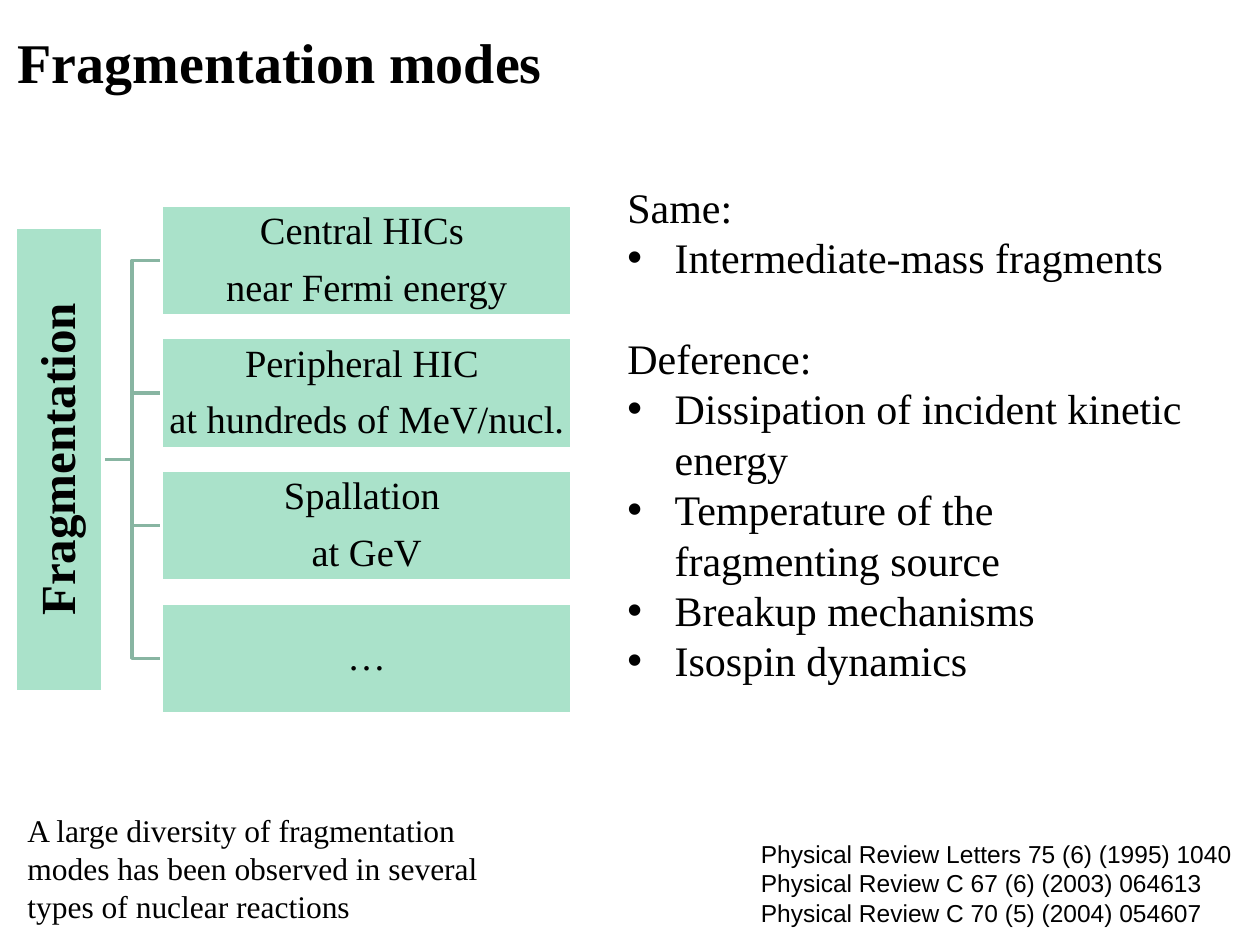
from lxml import etree
from pptx import Presentation
from pptx.dml.color import RGBColor
from pptx.enum import shapes, text
from pptx.oxml.ns import qn
from pptx.util import Pt

# Content
TITLE = "Fragmentation modes"
ROOT = "Fragmentation"
MODES = [
    ["Central HICs ", "near Fermi energy"],
    ["Peripheral HIC ", "at hundreds of MeV/nucl."],
    ["Spallation ", "at GeV"],
    ["…"],
]
COMPARISON = [
    ("Same:", ["Intermediate-mass fragments"]),
    ("Deference:", [
        "Dissipation of incident kinetic energy",
        "Temperature of the fragmenting source",
        "Breakup mechanisms",
        "Isospin dynamics",
    ]),
]
SUMMARY = ("A large diversity of fragmentation modes has been observed "
           "in several types of nuclear reactions")
REFERENCES = [
    "Physical Review Letters 75 (6) (1995) 1040",
    "Physical Review C 67 (6) (2003) 064613",
    "Physical Review C 70 (5) (2004) 054607",
]
COLORS = {"text": "000000", "block": "AAE2CA", "edge": "FFFFFF", "branch": "88B5A2"}
SERIF, SANS = "Times New Roman", "Arial"

# Tree geometry, in points
MODE_LEFT, MODE_TOP, MODE_WIDTH, MODE_HEIGHT = 92.2, 117.2, 234.7, 63.2
MODE_PITCH = 75.8
ROOT_LENGTH, ROOT_THICKNESS, ROOT_RIGHT = 265, 50.4, 59


def color(name):
    return RGBColor.from_string(COLORS[name])


def write(frame, lines, size, font=SERIF, bold=False):
    frame.text = "\n".join(lines)
    for para in frame.paragraphs:
        for span in para.runs:
            span.font.size = Pt(size)
            span.font.name = font
            span.font.bold = bold
            span.font.color.rgb = color("text")


def add_text(page, area, lines, size, font=SERIF, wrap=True):
    box = page.shapes.add_textbox(*map(Pt, area))
    box.text_frame.word_wrap = wrap
    write(box.text_frame, lines, size, font)
    return box.text_frame


def add_block(page, area, lines, size, bold=False):
    block = page.shapes.add_shape(shapes.MSO_SHAPE.RECTANGLE, *map(Pt, area))
    block.shadow.inherit = False
    block.fill.solid()
    block.fill.fore_color.rgb = color("block")
    block.line.color.rgb = color("edge")
    block.line.width = Pt(2)
    frame = block.text_frame
    frame.word_wrap = True
    frame.vertical_anchor = text.MSO_ANCHOR.MIDDLE
    frame.margin_left = frame.margin_right = Pt(1.4)
    frame.margin_top = frame.margin_bottom = Pt(1.4)
    write(frame, lines, size, bold=bold)
    for para in frame.paragraphs:
        para.alignment = text.PP_ALIGN.CENTER
        para.line_spacing = 0.9
        para.space_after = Pt(round(size * 0.4, 1))
    return block


def add_branch(page, start_y, end_y):
    middle = (ROOT_RIGHT + MODE_LEFT) / 2
    builder = page.shapes.build_freeform(Pt(ROOT_RIGHT), Pt(start_y))
    corners = [(middle, start_y), (middle, end_y), (MODE_LEFT, end_y)]
    builder.add_line_segments([(Pt(x), Pt(y)) for x, y in corners], close=False)
    branch = builder.convert_to_shape()
    branch.shadow.inherit = False
    branch.fill.background()
    branch.line.color.rgb = color("branch")
    branch.line.width = Pt(2)


def add_bullet(para):
    properties = para._p.get_or_add_pPr()
    properties.set("marL", str(Pt(27)))
    properties.set("indent", str(-Pt(27)))
    etree.SubElement(properties, qn("a:buFont")).set("typeface", SANS)
    etree.SubElement(properties, qn("a:buChar")).set("char", "•")


def main():
    deck = Presentation()
    deck.slide_width, deck.slide_height = Pt(720), Pt(540)
    page = deck.slides.add_slide(deck.slide_layouts[5])

    # Title
    title = page.shapes.title
    title.left, title.top, title.width, title.height = map(Pt, (2.9, 3.6, 663, 62.6))
    write(title.text_frame, [TITLE], 32, bold=True)
    title.text_frame.vertical_anchor = text.MSO_ANCHOR.MIDDLE
    title.text_frame.paragraphs[0].alignment = text.PP_ALIGN.LEFT

    # References and summary
    add_text(page, (427.7, 475.9, 285, 58.3), REFERENCES, 14, SANS, wrap=False)
    add_text(page, (8.6, 460, 272.2, 72.7), [SUMMARY], 18)

    # Tree: branches, then the root and the modes over them
    tops = [MODE_TOP + MODE_PITCH * index for index in range(len(MODES))]
    centers = [top + MODE_HEIGHT / 2 for top in tops]
    root_y = (centers[0] + centers[-1]) / 2
    for center in reversed(centers):
        add_branch(page, root_y, center)
    root_x = ROOT_RIGHT - ROOT_THICKNESS / 2
    root = add_block(page, (root_x - ROOT_LENGTH / 2, root_y - ROOT_THICKNESS / 2,
                            ROOT_LENGTH, ROOT_THICKNESS), [ROOT], 28, bold=True)
    root.rotation = 270
    for top, lines in zip(tops, MODES):
        add_block(page, (MODE_LEFT, top, MODE_WIDTH, MODE_HEIGHT), lines, 22)

    # Comparison list
    lines = [line for heading, points in COMPARISON for line in (heading, *points)]
    headings = [heading for heading, points in COMPARISON]
    frame = add_text(page, (351.4, 100.1, 339.8, 326.9), lines, 24)
    for para in frame.paragraphs:
        if para.text not in headings:
            add_bullet(para)
        elif para.text != headings[0]:
            para.space_before = Pt(28.8)

    deck.save("out.pptx")


if __name__ == "__main__":
    main()
